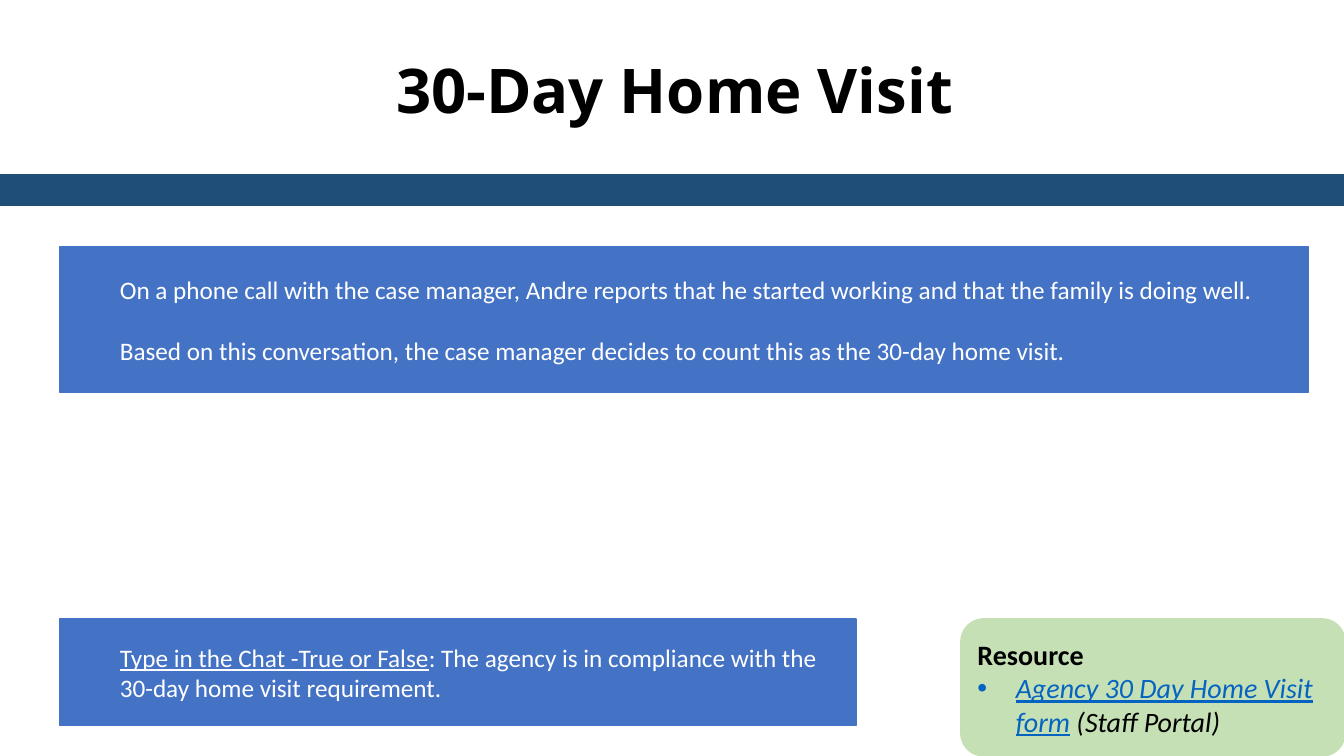
import pptx
import pptx.dml.color
import pptx.enum.shapes
import pptx.enum.text
import pptx.util
from lxml import etree
from pptx.dml.color import RGBColor
from pptx.enum.shapes import MSO_SHAPE
from pptx.enum.text import MSO_ANCHOR, PP_ALIGN
from pptx.oxml.ns import qn
from pptx.util import Inches, Pt

BLACK = RGBColor(0x00, 0x00, 0x00)
WHITE = RGBColor(0xFF, 0xFF, 0xFF)
NAVY = RGBColor(0x1F, 0x4E, 0x79)
BLUE = RGBColor(0x44, 0x72, 0xC4)
GREEN = RGBColor(0xC5, 0xE0, 0xB4)
LINK_BLUE = RGBColor(0x05, 0x63, 0xC1)

LEFT = 0.59
BOTTOM_ROW = 6.14


def add_panel(slide, kind, left, top, width, height, color):
    sp = slide.shapes.add_shape(
        kind, Inches(left), Inches(top), Inches(width), Inches(height))
    sp.shadow.inherit = False
    sp.fill.solid()
    sp.fill.fore_color.rgb = color
    sp.line.color.rgb = color
    sp.line.width = Pt(1)
    tf = sp.text_frame
    tf.word_wrap = True
    tf.vertical_anchor = MSO_ANCHOR.MIDDLE
    return sp


def add_run(p, text, size, color, font="Calibri", bold=False, italic=False,
            underline=False):
    r = p.add_run()
    r.text = text
    r.font.name = font
    r.font.size = Pt(size)
    r.font.color.rgb = color
    r.font.bold = bold
    r.font.italic = italic
    r.font.underline = underline


def set_indent(p, margin, first=0, bullet=None):
    pPr = p._p.get_or_add_pPr()
    pPr.set("marL", str(Inches(margin)))
    pPr.set("indent", str(Inches(first)))
    if bullet:
        etree.SubElement(pPr, qn("a:buFont")).set("typeface", "Arial")
        etree.SubElement(pPr, qn("a:buChar")).set("char", bullet)


def add_title(slide, text):
    box = slide.shapes.add_textbox(
        Inches(0.58), Inches(0.47), Inches(12.23), Inches(0.84))
    tf = box.text_frame
    tf.word_wrap = True
    p = tf.paragraphs[0]
    p.alignment = PP_ALIGN.CENTER
    add_run(p, text, 44, BLACK, font="Open Sans", bold=True)


def add_statement(slide, top, width, height, paragraphs):
    """Blue panel; each paragraph is a list of (text, underlined) pairs."""
    tf = add_panel(slide, MSO_SHAPE.RECTANGLE, LEFT, top, width, height,
                   BLUE).text_frame
    for i, parts in enumerate(paragraphs):
        p = tf.add_paragraph() if i else tf.paragraphs[0]
        p.level = 1
        p.alignment = PP_ALIGN.LEFT
        set_indent(p, 0.5)
        if i:
            p.space_before = Pt(22)
        for text, underlined in parts:
            add_run(p, text, 18, WHITE, underline=underlined)


def add_resource(slide):
    tf = add_panel(slide, MSO_SHAPE.FLOWCHART_ALTERNATE_PROCESS,
                   9.53, BOTTOM_ROW, 3.81, 1.36, GREEN).text_frame
    heading = tf.paragraphs[0]
    heading.alignment = PP_ALIGN.LEFT
    add_run(heading, "Resource", 20, BLACK, bold=True)
    item = tf.add_paragraph()
    item.alignment = PP_ALIGN.LEFT
    set_indent(item, 0.38, -0.38, "•")
    add_run(item, "Agency 30 Day Home Visit form", 20, LINK_BLUE,
            italic=True, underline=True)
    add_run(item, " (Staff Portal)", 20, BLACK, italic=True)


def main():
    prs = pptx.Presentation()
    prs.slide_width = Inches(13.33)
    prs.slide_height = Inches(7.5)
    slide = prs.slides.add_slide(prs.slide_layouts[6])

    add_title(slide, "30-Day Home Visit")
    add_panel(slide, MSO_SHAPE.RECTANGLE, 0, 1.73, 13.33, 0.31, NAVY)
    add_resource(slide)
    add_statement(slide, 2.45, 12.39, 1.44, [
        [("On a phone call with the case manager, Andre reports that he "
          "started working and that the family is doing well.", False)],
        [("Based on this conversation, the case manager decides to count "
          "this as the 30-day home visit.", False)],
    ])
    add_statement(slide, BOTTOM_ROW, 7.9, 1.06, [
        [("Type in the Chat -True or False", True),
         (": The agency is in compliance with the 30-day home visit "
          "requirement.", False)],
    ])
    prs.save("out.pptx")


if __name__ == "__main__":
    main()
